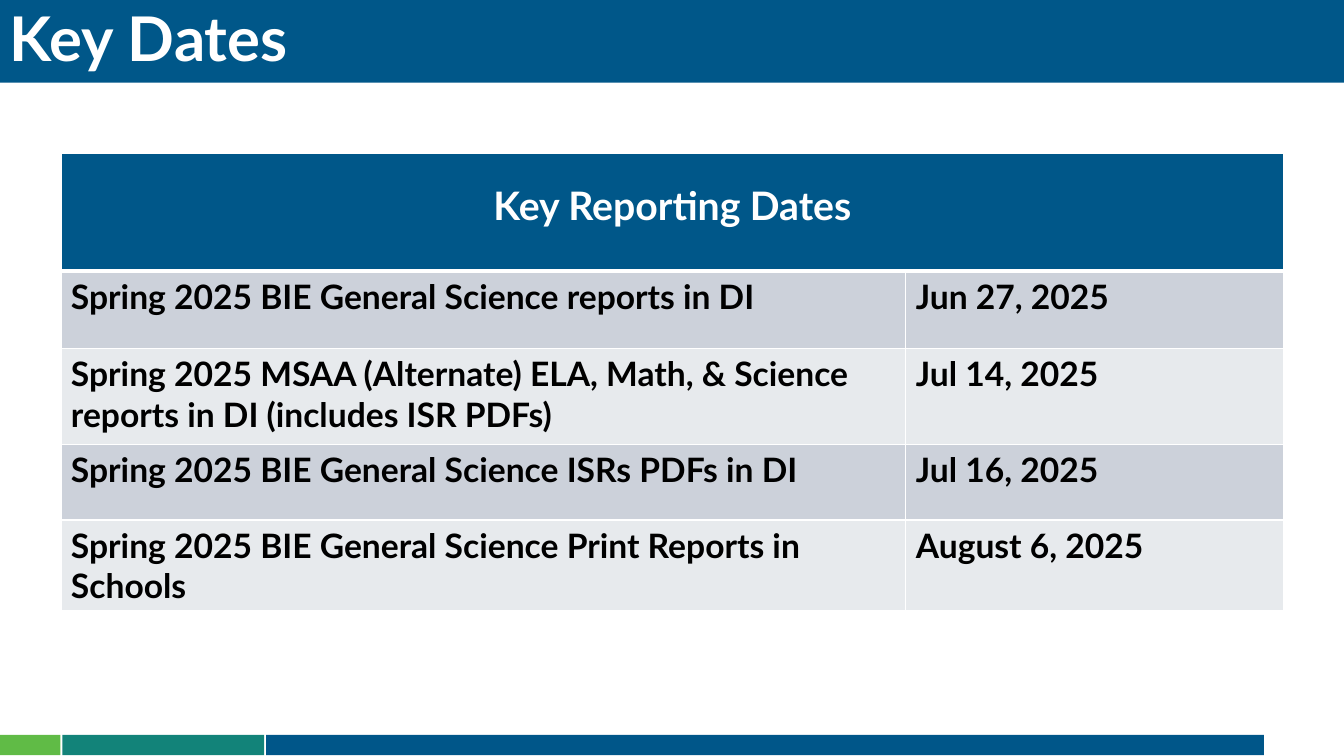
import pptx
import pptx.dml.color
import pptx.enum.shapes
import pptx.enum.text
import pptx.oxml
import pptx.oxml.ns
import pptx.util
from dataclasses import dataclass

Pt = pptx.util.Pt
RGB = pptx.dml.color.RGBColor.from_string
PP_ALIGN = pptx.enum.text.PP_ALIGN
MSO_ANCHOR = pptx.enum.text.MSO_ANCHOR


@dataclass(frozen=True)
class Theme:
    font: str = "Lato"
    blue: str = "005789"
    footer_colors: tuple = ("60BB46", "128379", "005689")
    bands: tuple = ("CCD1DA", "E7EAED")
    white: str = "FFFFFF"
    black: str = "000000"
    title_size: int = 44
    header_size: int = 28
    body_size: int = 24


theme = Theme()


def add_bar(left, top, width, height, color):
    sp = s.shapes.add_shape(pptx.enum.shapes.MSO_SHAPE.RECTANGLE,
                            Pt(left), Pt(top), Pt(width), Pt(height))
    sp.shadow.inherit = False
    sp.fill.solid()
    sp.fill.fore_color.rgb = RGB(color)
    sp.line.fill.background()
    return sp


def write(tf, text, size, color, align=PP_ALIGN.LEFT):
    tf.text = text
    p = tf.paragraphs[0]
    p.alignment = align
    font = p.runs[0].font
    font.name = theme.font
    font.size = Pt(size)
    font.bold = True
    font.color.rgb = RGB(color)
    return p


prs = pptx.Presentation()
prs.slide_width, prs.slide_height = Pt(960), Pt(540)
s = prs.slides.add_slide(prs.slide_layouts[6])

# Footer bars, separated by a narrow gap
left = 0
for width, color in zip((43.2, 144, 712.8), theme.footer_colors):
    add_bar(left, 525, width, 14.4, color)
    left += width + 1.44

# Title band
title = add_bar(0, 0, 960, 59, theme.blue)
title.text_frame.word_wrap = True
title.text_frame.vertical_anchor = MSO_ANCHOR.MIDDLE
p = write(title.text_frame, "Key Dates", theme.title_size, theme.white)
p.line_spacing = 0.9

# Table of dates
dates = [
    ("Spring 2025 BIE General Science reports in DI", "Jun 27, 2025"),
    ("Spring 2025 MSAA (Alternate) ELA, Math, & Science reports in DI (includes ISR PDFs)",
     "Jul 14, 2025"),
    ("Spring 2025 BIE General Science ISRs PDFs in DI", "Jul 16, 2025"),
    ("Spring 2025 BIE General Science Print Reports in Schools", "August 6, 2025"),
]
col_widths = (603.5, 270)
row_heights = (84, 55.5, 68.5, 54, 64.8)
table = s.shapes.add_table(len(row_heights), len(col_widths), Pt(43.5), Pt(109.5),
                           Pt(sum(col_widths)), Pt(sum(row_heights))).table
for column, width in zip(table.columns, col_widths):
    column.width = Pt(width)
for row, height in zip(table.rows, row_heights):
    row.height = Pt(height)

header = table.cell(0, 0)
header.merge(table.cell(0, 1))
header.margin_top = Pt(20.4)
write(header.text_frame, "Key Reporting Dates", theme.header_size, theme.white,
      PP_ALIGN.CENTER)
for r, texts in enumerate(dates, start=1):
    for c, text in enumerate(texts):
        write(table.cell(r, c).text_frame, text, theme.body_size, theme.black)

# Cell fills and white rules, thicker below the header
for r, row in enumerate(table.rows):
    for cell in row.cells:
        cell.vertical_anchor = MSO_ANCHOR.TOP
        tcPr = cell._tc.get_or_add_tcPr()
        for side in ("lnL", "lnR", "lnT", "lnB"):
            thick = (r, side) in ((0, "lnB"), (1, "lnT"))
            tcPr.append(pptx.oxml.parse_xml(
                f'<a:{side} {pptx.oxml.ns.nsdecls("a")} w="{Pt(3 if thick else 1)}">'
                f'<a:solidFill><a:srgbClr val="{theme.white}"/></a:solidFill></a:{side}>'))
        cell.fill.solid()
        cell.fill.fore_color.rgb = RGB(theme.bands[(r - 1) % 2] if r else theme.blue)

prs.save("out.pptx")
